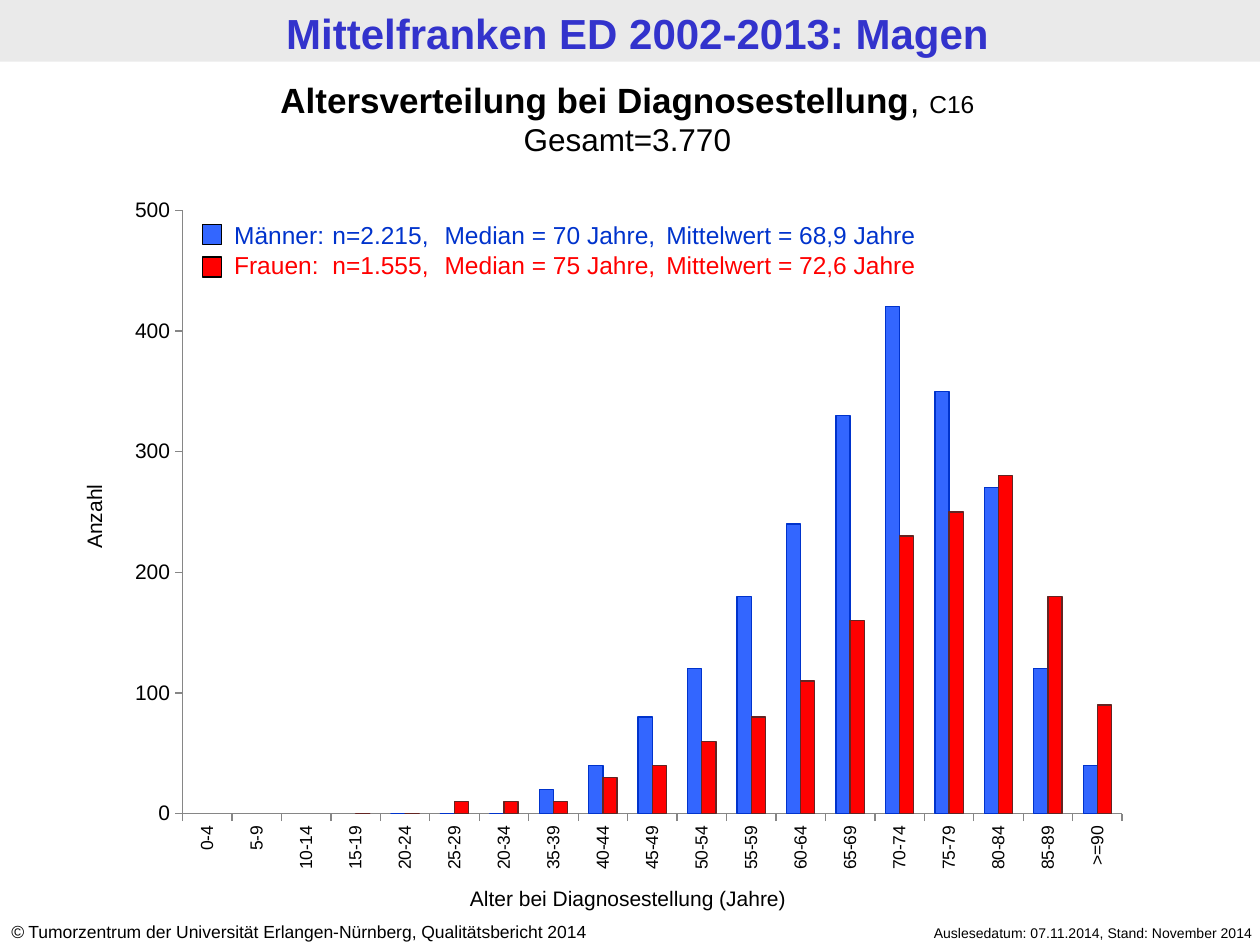
from dataclasses import dataclass

import pptx
import pptx.chart.data
import pptx.dml.color
import pptx.enum.chart
import pptx.enum.shapes
import pptx.enum.text
import pptx.oxml
import pptx.oxml.ns
import pptx.util
from pptx.util import Inches

COLORS = {
    "black": "000000", "white": "FFFFFF", "band": "EAEAEA", "title": "3333CC",
    "men": "3366FF", "men_dark": "0033CC", "women": "FF0000",
    "women_line": "632523", "axis": "868686",
}
ALIGN = pptx.enum.text.PP_ALIGN
NAMESPACES = pptx.oxml.ns.nsdecls("a", "c")


@dataclass
class Run:
    text: str
    size: float
    color: str = "black"
    bold: bool = False
    italic: bool = False


@dataclass
class Label:
    box: tuple
    lines: list
    align: ALIGN = ALIGN.LEFT
    rotation: float = 0
    tabs: tuple = ()


@dataclass
class Group:
    name: str
    counts: list
    fill: str
    outline: str
    text_color: str
    legend: str
    legend_top: float


AGES = ["0-4", "5-9", "10-14", "15-19", "20-24", "25-29", "20-34", "35-39",
        "40-44", "45-49", "50-54", "55-59", "60-64", "65-69", "70-74",
        "75-79", "80-84", "85-89", ">=90"]
GROUPS = [
    Group("Männer", [None] * 4 + [0, 0, 0, 20, 40, 80, 120, 180, 240, 330, 420,
                                  350, 270, 120, 40],
          "men", "men_dark", "men_dark",
          "Männer: \tn=2.215, \tMedian = 70 Jahre, \tMittelwert = 68,9 Jahre", 1.78),
    Group("Frauen", [None] * 3 + [0, 0, 10, 10, 10, 30, 40, 60, 80, 110, 160, 230,
                                  250, 280, 180, 90],
          "women", "women_line", "women",
          "Frauen: \tn=1.555, \tMedian = 75 Jahre,\tMittelwert = 72,6 Jahre", 2.04),
]
TITLE = Label((0.06, 0.01, 10, 0.49),
              [[Run("Mittelfranken ED 2002-2013: Magen", 24, "title", bold=True)]],
              ALIGN.CENTER)
LABELS = [
    Label((6.65, 7.29, 3.39, 0.24),
          [[Run("Auslesedatum: 07.11.2014, Stand: November 2014", 8)]], ALIGN.RIGHT),
    Label((-0.01, 7.26, 5.24, 0.27),
          [[Run("©", 10, italic=True),
            Run(" Tumorzentrum der Universität Erlangen-Nürnberg, "
                "Qualitätsbericht 2014", 10)]]),
    Label((-0.04, 0.57, 10.04, 0.74),
          [[Run("Altersverteilung bei Diagnosestellung", 20, bold=True),
            Run(", ", 20), Run("C16", 14)],
           [Run("Gesamt=3.770", 18)]], ALIGN.CENTER),
    Label((1.76, 1.7, 6.85, 0.57),
          [[Run(group.legend, 14, group.text_color)] for group in GROUPS],
          tabs=(0.78, 0.88, 1.67, 3.43)),
    Label((3.45, 6.98, 3.07, 0.3),
          [[Run("Alter bei Diagnosestellung (Jahre)", 12)]], ALIGN.CENTER),
    Label((-0.56, 3.95, 2.61, 0.3), [[Run("Anzahl", 12)]], ALIGN.CENTER, 270),
]


def rgb(name: str) -> pptx.dml.color.RGBColor:
    return pptx.dml.color.RGBColor.from_string(COLORS[name])


def paint(part, fill: str) -> None:
    part.fill.solid()
    part.fill.fore_color.rgb = rgb(fill)


def outline(line, color: str) -> None:
    line.color.rgb = rgb(color)
    line.width = pptx.util.Pt(0.75)


def set_font(font, size: float, color: str = "black", name: str = "Arial") -> None:
    font.name = name
    font.size = pptx.util.Pt(size)
    font.color.rgb = rgb(color)


def write_label(shape, label: Label) -> None:
    shape.left, shape.top, shape.width, shape.height = map(Inches, label.box)
    shape.rotation = label.rotation
    frame = shape.text_frame
    frame.word_wrap = True
    frame.auto_size = pptx.enum.text.MSO_AUTO_SIZE.NONE
    for index, runs in enumerate(label.lines):
        paragraph = frame.add_paragraph() if index else frame.paragraphs[0]
        paragraph.alignment = label.align
        if label.tabs:
            stops = "".join(f'<a:tab pos="{Inches(stop)}" algn="l"/>' for stop in label.tabs)
            properties = paragraph._p.get_or_add_pPr()
            properties.append(pptx.oxml.parse_xml(
                f"<a:tabLst {NAMESPACES}>{stops}</a:tabLst>"))
        for item in runs:
            run = paragraph.add_run()
            run.text = item.text
            set_font(run.font, item.size, item.color)
            run.font.bold = item.bold
            run.font.italic = item.italic


def add_rectangle(slide, box: tuple, fill: str):
    shape = slide.shapes.add_shape(
        pptx.enum.shapes.MSO_SHAPE.RECTANGLE, *map(Inches, box))
    shape.shadow.inherit = False
    paint(shape, fill)
    shape.line.fill.background()
    return shape


def add_age_chart(slide) -> None:
    data = pptx.chart.data.CategoryChartData()
    data.categories = AGES
    for group in GROUPS:
        data.add_series(group.name, group.counts)
    chart = slide.shapes.add_chart(
        pptx.enum.chart.XL_CHART_TYPE.COLUMN_CLUSTERED,
        *map(Inches, (0.91, 1.47, 8.16, 5.55)), data).chart
    chart.has_legend = False
    chart.has_title = False
    set_font(chart.font, 18, name="Calibri")

    plot = chart.plots[0]
    plot.gap_width = 150
    plot.overlap = 0
    plot.vary_by_categories = False
    for series, group in zip(plot.series, GROUPS):
        paint(series.format, group.fill)
        outline(series.format.line, group.outline)
        series.invert_if_negative = False

    for axis, size in ((chart.category_axis, 10), (chart.value_axis, 12)):
        axis.has_major_gridlines = False
        axis.major_tick_mark = pptx.enum.chart.XL_TICK_MARK.OUTSIDE
        axis.minor_tick_mark = pptx.enum.chart.XL_TICK_MARK.NONE
        set_font(axis.tick_labels.font, size)
        outline(axis.format.line, "axis")
    chart.value_axis.minimum_scale = 0
    chart.value_axis.maximum_scale = 500
    chart.value_axis.major_unit = 100
    label_body = chart.category_axis._element.find(
        f"{pptx.oxml.ns.qn('c:txPr')}/{pptx.oxml.ns.qn('a:bodyPr')}")
    label_body.set("rot", "-5400000")
    label_body.set("vert", "horz")

    plot_area = chart._chartSpace.chart.plotArea
    for old in plot_area.findall(pptx.oxml.ns.qn("c:layout")):
        plot_area.remove(old)
    plot_area.insert(0, pptx.oxml.parse_xml(
        f'<c:layout {NAMESPACES}><c:manualLayout><c:layoutTarget val="inner"/>'
        '<c:xMode val="edge"/><c:yMode val="edge"/><c:x val="0.066"/>'
        '<c:y val="0.036"/><c:w val="0.914"/><c:h val="0.863"/>'
        '</c:manualLayout></c:layout>'))
    plot_area.append(pptx.oxml.parse_xml(
        f'<c:spPr {NAMESPACES}><a:solidFill><a:srgbClr val="{COLORS["white"]}"/>'
        '</a:solidFill></c:spPr>'))


def main() -> None:
    presentation = pptx.Presentation()
    presentation.slide_width = Inches(10)
    presentation.slide_height = Inches(7.5)
    slide = presentation.slides.add_slide(presentation.slide_layouts[5])
    title = slide.shapes.title
    band = add_rectangle(slide, (0, 0, 10, 0.49), "band")
    title.element.addprevious(band.element)
    write_label(title, TITLE)
    title.text_frame.vertical_anchor = pptx.enum.text.MSO_ANCHOR.TOP
    add_age_chart(slide)
    for label in LABELS:
        write_label(slide.shapes.add_textbox(*map(Inches, label.box)), label)
    for group in GROUPS:
        key = add_rectangle(slide, (1.61, group.legend_top, 0.15, 0.16), group.fill)
        outline(key.line, "black")
    presentation.save("out.pptx")


if __name__ == "__main__":
    main()
